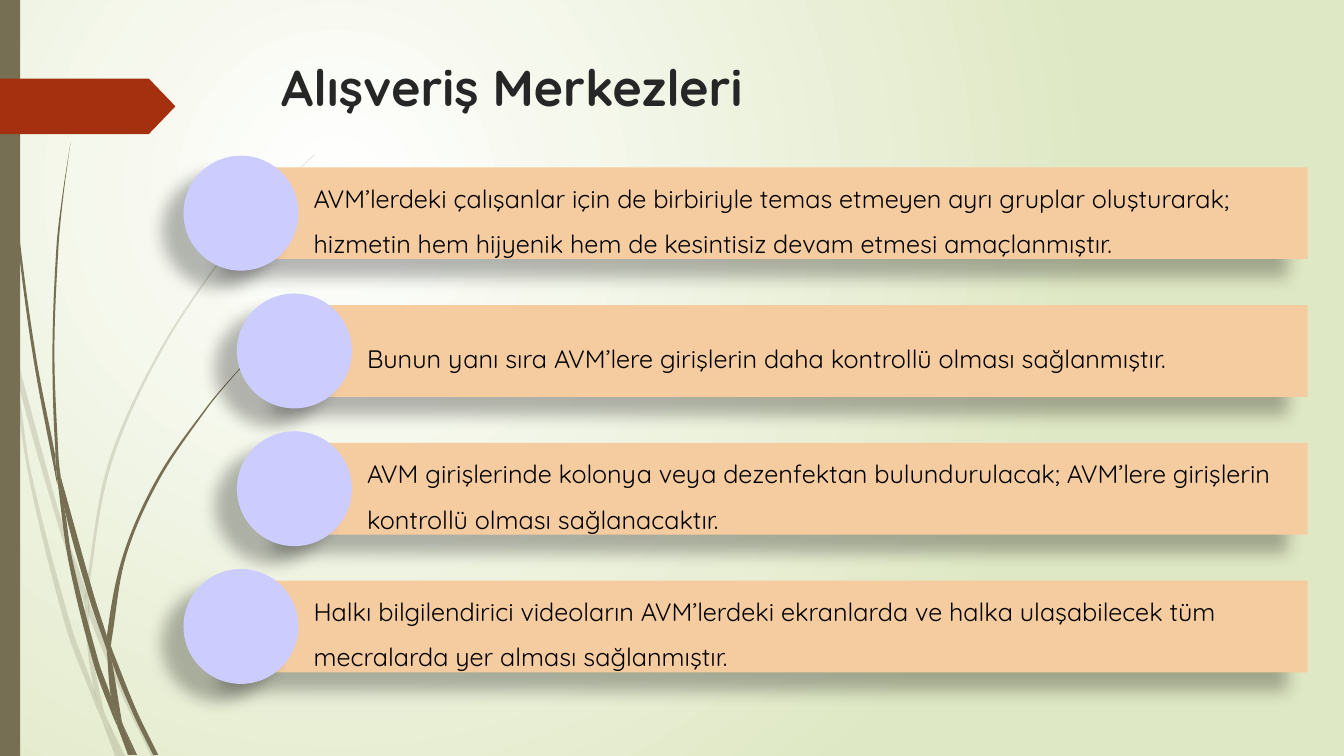
from math import dist

from lxml import etree
from pptx import Presentation
from pptx.dml.color import RGBColor
from pptx.enum.shapes import MSO_SHAPE as Preset
from pptx.enum.text import MSO_ANCHOR as Anchor, PP_ALIGN as Align
from pptx.oxml.ns import qn
from pptx.util import Inches, Pt

COLORS = {
    "center": "FFFFFF", "edge": "DFE8C4", "stalk": "766F54", "arrow": "A53010",
    "bar": "F5CBA0", "circle": "CCCCFF", "title": "262626", "text": "000000",
}
FONT = "Quicksand"
BAR_TOP, BAR_RIGHT, BAR_HEIGHT, CIRCLE_SIZE = 1.66, 12.97, 0.91, 1.14
BAR_STEP = 4.1 / 3

MEASURES = [
    (2.39, "AVM’lerdeki çalışanlar için de birbiriyle temas etmeyen ayrı gruplar oluşturarak; "
           "hizmetin hem hijyenik hem de kesintisiz devam etmesi amaçlanmıştır."),
    (2.92, "Bunun yanı sıra AVM’lere girişlerin daha kontrollü olması sağlanmıştır."),
    (2.92, "AVM girişlerinde kolonya veya dezenfektan bulundurulacak; "
           "AVM’lere girişlerin kontrollü olması sağlanacaktır."),
    (2.39, "Halkı bilgilendirici videoların AVM’lerdeki ekranlarda ve halka ulaşabilecek tüm "
           "mecralarda yer alması sağlanmıştır."),
]

PALE_LEAVES = [
    [(0.11, 3.5), (0.09, 3.22), (0, 2.82), (0, 2.99), (0.1, 3.44)],
    [(0.58, 5.22), (0.84, 5.99), (0.85, 5.86), (0.62, 5.2), (0.14, 3.45), (0.17, 3.76)],
    [(0.92, 6.07), (0.88, 5.96), (0.88, 6.1), (1.23, 6.94), (1.5, 7.5), (1.55, 7.5),
     (1.27, 6.92)],
    [(1.19, 7.5), (1.24, 7.5), (1.05, 7.11)],
    [(0.93, 6.83), (0.7, 6.19), (0.31, 4.69), (0.17, 3.76), (0.11, 3.5), (0.28, 4.7),
     (0.65, 6.21), (0.92, 6.93), (1.01, 7.14), (0.99, 7.07)],
    [(0.84, 5.99), (0.87, 6.46), (0.93, 6.83), (0.96, 6.92), (1.05, 7.11), (1.03, 7.06),
     (0.91, 6.46), (0.88, 6.1), (0.88, 6.08)],
    [(0.88, 5.84), (1.1, 4.62), (1.6, 3.49), (2.29, 2.45), (2.68, 1.98), (2.9, 1.75),
     (3.12, 1.54), (3.12, 1.53), (2.89, 1.75), (2.68, 1.97), (2.28, 2.44), (1.58, 3.48),
     (1.07, 4.61), (0.85, 5.84), (0.85, 5.86), (0.88, 5.96)],
    [(1.01, 7.14), (1.14, 7.5), (1.19, 7.5)],
    [(0.88, 6.08), (0.88, 6.1), (0.88, 5.96), (0.85, 5.86), (0.84, 5.99)],
    [(0.96, 6.92), (0.93, 6.83), (0.99, 7.07), (1.01, 7.14), (1.19, 7.5), (1.05, 7.11)],
]
DARK_LEAVES = [
    [(0.07, 1.1), (0.17, 2.33), (0.33, 3.55), (0.56, 4.77), (0.57, 4.81), (0.55, 4.57),
     (0.55, 4.53), (0.36, 3.55), (0.19, 2.32), (0.08, 1.09), (0.05, 0.48), (0.04, 0),
     (0.03, 0), (0.04, 0.48)],
    [(0.88, 5.92), (1.06, 6.45), (1.06, 6.33), (1.06, 6.31), (0.93, 5.9), (0.6, 4.72),
     (0.64, 5.05)],
    [(1.13, 6.49), (1.1, 6.41), (1.11, 6.56), (1.32, 7.08), (1.52, 7.49), (1.57, 7.49),
     (1.36, 7.06)],
    [(1.1, 6.91), (0.98, 6.57), (0.72, 5.56), (0.64, 5.05), (0.57, 4.77), (0.68, 5.57),
     (0.93, 6.59), (1.11, 7.08), (1.17, 7.22), (1.16, 7.17)],
    [(0.6, 4.72), (0.58, 4.53), (0.54, 3.49), (0.58, 2.45), (0.63, 1.93), (0.7, 1.41),
     (0.62, 1.93), (0.56, 2.45), (0.52, 3.49), (0.55, 4.49)],
    [(1.33, 7.49), (1.36, 7.49), (1.22, 7.19)],
    [(0.57, 4.77), (0.64, 5.05), (0.6, 4.72), (0.55, 4.49), (0.55, 4.53)],
    [(1.11, 6.33), (1.25, 5.52), (1.58, 4.76), (2.05, 4.06), (2.31, 3.74), (2.45, 3.59),
     (2.61, 3.44), (2.6, 3.44), (2.45, 3.58), (2.31, 3.73), (2.04, 4.05), (1.56, 4.74),
     (1.22, 5.51), (1.06, 6.31), (1.1, 6.41)],
    [(1.17, 7.22), (1.27, 7.49), (1.31, 7.49)],
    [(1.06, 6.45), (1.1, 6.91), (1.16, 7.06), (1.22, 7.19), (1.21, 7.16), (1.11, 6.56),
     (1.09, 6.51)],
    [(1.06, 6.45), (1.09, 6.51), (1.11, 6.56), (1.1, 6.41), (1.06, 6.31), (1.06, 6.33)],
    [(1.16, 7.06), (1.1, 6.91), (1.16, 7.17), (1.17, 7.22), (1.3, 7.49), (1.33, 7.49),
     (1.22, 7.19)],
]


def color(name):
    return RGBColor.from_string(COLORS[name])


def paint(shape, name):
    shape.shadow.inherit = False
    shape.fill.solid()
    shape.fill.fore_color.rgb = color(name)
    shape.line.fill.background()


def add_preset(page, kind, box, name):
    shape = page.shapes.add_shape(kind, *map(Inches, box))
    paint(shape, name)
    return shape


def cast_shadow(shape):
    effects = shape._element.spPr.find(qn("a:effectLst"))
    shadow = etree.SubElement(effects, qn("a:outerShdw"), blurRad=str(Pt(11.8)),
                              dist=str(Pt(19.7)), dir="8460000", algn="ctr", rotWithShape="0")
    tone = etree.SubElement(shadow, qn("a:srgbClr"), val=COLORS["text"])
    etree.SubElement(tone, qn("a:alpha"), val="28000")


def add_span(para, text, size, name, bold=False):
    span = para.add_run()
    span.text = text
    span.font.name = FONT
    span.font.size = Pt(size)
    span.font.bold = bold
    span.font.color.rgb = color(name)


def direction(start, end):
    length = dist(start, end)
    return (end[0] - start[0]) / length, (end[1] - start[1]) / length


def handle(before, point, after, toward):
    arriving, leaving = direction(before, point), direction(point, after)
    if arriving[0] * leaving[0] + arriving[1] * leaving[1] < 0.7:
        heading = direction(point, toward)
    else:
        heading = direction(before, after) if toward == after else direction(after, before)
    reach = dist(point, toward) / 3
    return point[0] + heading[0] * reach, point[1] + heading[1] * reach


def add_leaf(page, points, alpha):
    corners = [(Inches(x), Inches(y)) for x, y in points]
    builder = page.shapes.build_freeform(*corners[0])
    builder.add_line_segments(corners[1:] + corners[:1], close=True)
    leaf = builder.convert_to_shape()
    paint(leaf, "stalk")
    left, top = (min(axis) for axis in zip(*corners))
    count = len(corners)
    for index, side in enumerate(list(leaf._element.iter(qn("a:lnTo")))):
        before, start, end, after = (corners[(index + k) % count] for k in (-1, 0, 1, 2))
        controls = handle(before, start, end, end), handle(start, end, after, start)
        side.tag = qn("a:cubicBezTo")
        for place, (x, y) in enumerate(controls):
            control = etree.Element(qn("a:pt"), x=str(round(x - left)), y=str(round(y - top)))
            side.insert(place, control)
    tone = leaf._element.spPr.find(qn("a:solidFill"))[0]
    etree.SubElement(tone, qn("a:alpha"), val=str(alpha * 1000))


def add_background(page):
    fill = page.background.fill
    fill.gradient()
    for stop, name, position in zip(fill.gradient_stops, ("center", "edge"), (0, 1)):
        stop.color.rgb = color(name)
        stop.position = position
    gradient = page._element.find(".//" + qn("a:gradFill"))
    gradient.remove(gradient.find(qn("a:lin")))
    circle = etree.SubElement(gradient, qn("a:path"), {"path": "circle"})
    etree.SubElement(circle, qn("a:fillToRect"), l="50000", t="50000", r="100000", b="100000")


def add_side_decor(page):
    for leaves, alpha in ((PALE_LEAVES, 20), (DARK_LEAVES, 100)):
        for points in leaves:
            add_leaf(page, points, alpha)
    add_preset(page, Preset.RECTANGLE, (0, 0, 0.2, 7.5), "stalk")
    arrow = add_preset(page, Preset.PENTAGON, (0, 0.78, 1.74, 0.55), "arrow")
    arrow.adjustments[0] = 0.48


def add_text(page, box):
    frame = page.shapes.add_textbox(*map(Inches, box)).text_frame
    frame.word_wrap = True
    return frame


def add_measure(page, left, top, text):
    box = (left, top, BAR_RIGHT - left, BAR_HEIGHT)
    cast_shadow(add_preset(page, Preset.RECTANGLE, box, "bar"))
    frame = add_text(page, box)
    frame.vertical_anchor = Anchor.MIDDLE
    frame.margin_left = Inches(0.72)
    frame.margin_right = frame.margin_top = frame.margin_bottom = Inches(0.05)
    para = frame.paragraphs[0]
    para.alignment = Align.LEFT
    para.line_spacing = 1.5
    add_span(para, text, 18, "text")
    circle_top = top + (BAR_HEIGHT - CIRCLE_SIZE) / 2
    circle_box = (left - CIRCLE_SIZE / 2, circle_top, CIRCLE_SIZE, CIRCLE_SIZE)
    cast_shadow(add_preset(page, Preset.OVAL, circle_box, "circle"))


def main():
    deck = Presentation()
    deck.slide_width, deck.slide_height = Inches(13.33), Inches(7.5)
    page = deck.slides.add_slide(deck.slide_layouts[6])
    add_background(page)
    add_side_decor(page)
    for index, (left, text) in enumerate(MEASURES):
        add_measure(page, left, BAR_TOP + index * BAR_STEP, text)
    title = add_text(page, (2.69, 0.51, 9.75, 1.4))
    add_span(title.paragraphs[0], "Alışveriş Merkezleri", 36, "title", True)
    deck.save("out.pptx")


if __name__ == "__main__":
    main()
